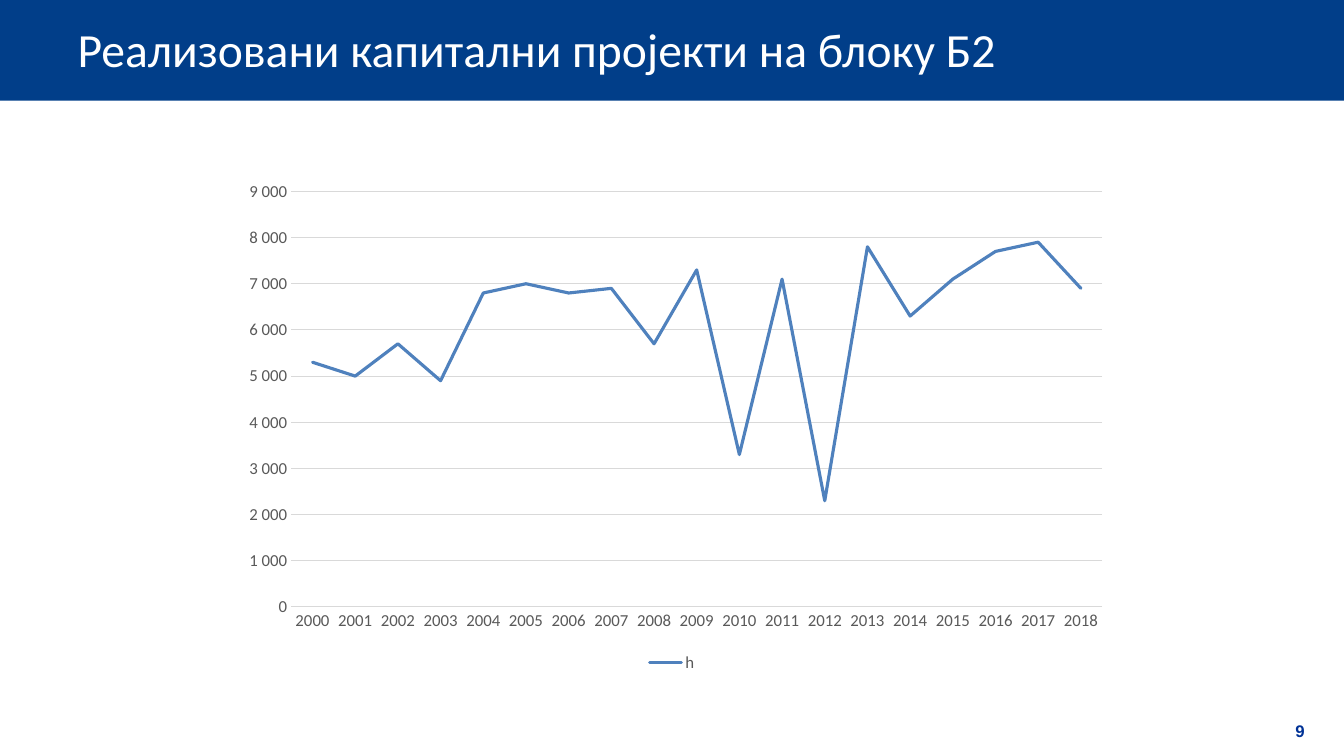
"""Build a slide with a line chart of yearly hours for block B2."""
from typing import NamedTuple

from lxml import etree
from pptx import Presentation
from pptx.chart.data import CategoryChartData
from pptx.dml.color import RGBColor
from pptx.enum.chart import XL_CHART_TYPE, XL_LEGEND_POSITION, XL_TICK_MARK
from pptx.enum.shapes import MSO_SHAPE
from pptx.enum.text import MSO_ANCHOR, MSO_AUTO_SIZE, PP_ALIGN
from pptx.util import Inches, Pt

LINE = XL_CHART_TYPE.LINE
BOTTOM = XL_LEGEND_POSITION.BOTTOM
NO_TICK = XL_TICK_MARK.NONE
RECT = MSO_SHAPE.RECTANGLE
MIDDLE = MSO_ANCHOR.MIDDLE
NO_FIT = MSO_AUTO_SIZE.NONE
LEFT, CENTER = PP_ALIGN.LEFT, PP_ALIGN.CENTER

COLORS = {"band": "013E89", "white": "FFFFFF", "number": "003296",
          "label": "595959", "grid": "D9D9D9", "hours": "4F81BD"}
HOURS = (5300, 5000, 5700, 4900, 6800, 7000, 6800, 6900, 5700, 7300,
         3300, 7100, 2300, 7800, 6300, 7100, 7700, 7900, 6900)
START = 2000


class Box(NamedTuple):
    """Position of an object in inches."""
    left: float
    top: float
    width: float
    height: float

    def place(self) -> tuple:
        """Return the four lengths."""
        return tuple(Inches(side) for side in self)


class Style(NamedTuple):
    """Look of a piece of text."""
    size: int
    color: str
    face: str = "Calibri"
    bold: bool = False


LABEL = Style(12, "label")


def color(name: str) -> RGBColor:
    """Look up a named color."""
    return RGBColor.from_string(COLORS[name])


def set_font(font, style: Style) -> None:
    """Apply a style to a font."""
    font.name, font.size, font.bold = style.face, Pt(style.size), style.bold
    font.color.rgb = color(style.color)


def set_line(line, name: str, width: float) -> None:
    """Apply a color and a width to a line."""
    line.color.rgb = color(name)
    line.width = Pt(width)


def set_text(shape, text: str, style: Style, align) -> None:
    """Fill a shape with one line of text."""
    frame = shape.text_frame
    frame.text = text
    frame.word_wrap = True
    frame.auto_size = NO_FIT
    frame.vertical_anchor = MIDDLE
    para = frame.paragraphs[0]
    para.alignment = align
    set_font(para.runs[0].font, style)


def add_band(slide, box: Box) -> None:
    """Add the header band behind the title."""
    band = slide.shapes.add_shape(RECT, *box.place())
    band.shadow.inherit = False
    band.fill.solid()
    band.fill.fore_color.rgb = color("band")
    band.line.fill.background()
    tree = slide.shapes.title.element.getparent()
    tree.insert(2, band.element)


def set_title(slide, box: Box, text: str) -> None:
    """Move and fill the title."""
    title = slide.shapes.title
    title.left, title.top, title.width, title.height = box.place()
    set_text(title, text, Style(34, "white"), LEFT)


def set_axis(axis) -> None:
    """Format what both axes share."""
    axis.major_tick_mark = axis.minor_tick_mark = NO_TICK
    set_font(axis.tick_labels.font, LABEL)


def add_hours(slide, box: Box) -> None:
    """Add the line chart of hours by year."""
    data = CategoryChartData(number_format="0")
    data.categories = [str(START + step) for step in range(len(HOURS))]
    data.add_series("h", HOURS)
    chart = slide.shapes.add_chart(LINE, *box.place(), data).chart
    chart.has_title = False
    chart.font.name, chart.font.size = "Calibri", Pt(10)

    years, scale = chart.category_axis, chart.value_axis
    set_axis(years)
    set_axis(scale)
    set_line(years.format.line, "grid", 0.75)
    scale.format.line.fill.background()
    scale.minimum_scale, scale.maximum_scale = 0, 9000
    scale.major_unit = 1000
    scale.has_major_gridlines = True
    set_line(scale.major_gridlines.format.line, "grid", 0.75)
    scale.tick_labels.number_format = r"###\ ###\ ###\ ##0"
    scale.tick_labels.number_format_is_linked = False

    chart.has_legend = True
    chart.legend.position = BOTTOM
    chart.legend.include_in_layout = False
    set_font(chart.legend.font, LABEL)

    plot = chart.plots[0]
    plot.vary_by_categories = False
    series = plot.series[0]
    series.smooth = False
    set_line(series.format.line, "hours", 2.25)
    line = series.format.line.fill._xPr
    line.set("cap", "rnd")
    etree.SubElement(line, line.tag.replace("}ln", "}round"))


def main() -> None:
    """Build and save the slide."""
    deck = Presentation()
    deck.slide_width, deck.slide_height = Inches(13.33), Inches(7.5)
    slide = deck.slides.add_slide(deck.slide_layouts[5])
    add_band(slide, Box(0, 0, 13.33, 1))
    set_title(slide, Box(0.67, 0.05, 10.96, 0.87),
              "Реализовани капитални пројекти на блоку Б2")
    add_hours(slide, Box(2.22, 1.7, 8.89, 5.01))
    number = slide.shapes.add_textbox(*Box(12.55, 7.05, 0.69, 0.4).place())
    set_text(number, "9", Style(12, "number", "Arial", True), CENTER)
    deck.save("out.pptx")


if __name__ == "__main__":
    main()
